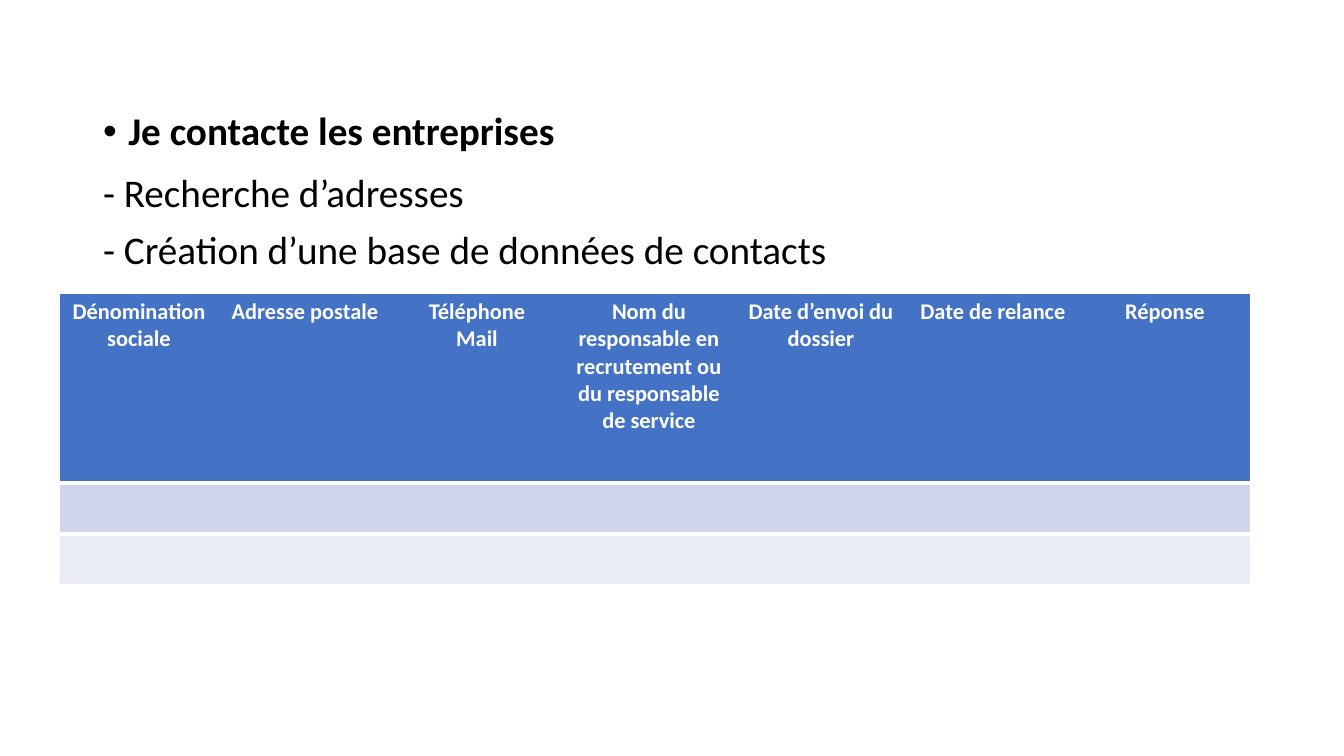
"""Build the slide on contacting companies, with its contact table."""
from dataclasses import dataclass

import lxml.etree
import pptx
import pptx.dml.color
import pptx.enum.text
import pptx.oxml.ns
import pptx.util

EMU_PER_PX = 12192000 / 1344
FONT = "Calibri"
BLACK = pptx.dml.color.RGBColor(0x00, 0x00, 0x00)
WHITE = pptx.dml.color.RGBColor(0xFF, 0xFF, 0xFF)
HEADER_BLUE = pptx.dml.color.RGBColor(0x44, 0x72, 0xC4)
BAND_DARK = pptx.dml.color.RGBColor(0xCF, 0xD5, 0xEA)
BAND_LIGHT = pptx.dml.color.RGBColor(0xE9, 0xEB, 0xF5)
PLAIN_TABLE_STYLE = "{2D5ABB26-0587-4C30-8999-92F81FD0307C}"


@dataclass(frozen=True)
class Box:
    left: int
    top: int
    width: int
    height: int


@dataclass(frozen=True)
class Column:
    heading: str
    width: int = 172


@dataclass(frozen=True)
class Row:
    height: int
    fill: pptx.dml.color.RGBColor
    top_border: int = 0
    bottom_border: int = 0


HEADING_BOX = Box(93, 107, 478, 53)
STEPS_BOX = Box(93, 169, 1159, 480)
TABLE_LEFT, TABLE_TOP = 59, 293
COLUMNS = [
    Column("Dénomination sociale", 160),
    Column("Adresse postale"),
    Column("Téléphone\nMail"),
    Column("Nom du responsable en recrutement ou du responsable de service"),
    Column("Date d’envoi du dossier"),
    Column("Date de relance"),
    Column("Réponse"),
]
ROWS = [
    Row(190, HEADER_BLUE, top_border=1, bottom_border=3),
    Row(51, BAND_DARK, top_border=3),
    Row(51, BAND_LIGHT, bottom_border=1),
]


def px(length: int) -> int:
    return round(length * EMU_PER_PX)


def add_element(parent, tag: str, **attributes: str):
    return lxml.etree.SubElement(parent, pptx.oxml.ns.qn(tag), attributes)


def format_runs(paragraph, size: int, color: pptx.dml.color.RGBColor, bold: bool) -> None:
    for run in paragraph.runs:
        run.font.name = FONT
        run.font.size = pptx.util.Pt(size)
        run.font.bold = bold
        run.font.color.rgb = color


def fill_placeholder(shape, box: Box, text: str, bold: bool, bullet: str = "") -> None:
    shape.left, shape.top = px(box.left), px(box.top)
    shape.width, shape.height = px(box.width), px(box.height)
    text_frame = shape.text_frame
    text_frame.text = text
    text_frame.vertical_anchor = pptx.enum.text.MSO_ANCHOR.TOP
    text_frame.auto_size = pptx.enum.text.MSO_AUTO_SIZE.NONE
    indent = pptx.util.Inches(0.25) if bullet else 0
    for paragraph in text_frame.paragraphs:
        paragraph.alignment = pptx.enum.text.PP_ALIGN.LEFT
        paragraph.line_spacing = 0.9
        paragraph.space_before = pptx.util.Pt(10)
        format_runs(paragraph, 28, BLACK, bold)
        properties = paragraph._p.get_or_add_pPr()
        properties.set("marL", str(indent))
        properties.set("indent", str(-indent))
        if bullet:
            add_element(properties, "a:buFont", typeface="Arial")
            add_element(properties, "a:buChar", char=bullet)
        else:
            add_element(properties, "a:buNone")


def add_border(cell, side: str, points: int) -> None:
    width = str(pptx.util.Pt(points))
    line = add_element(cell._tc.get_or_add_tcPr(), f"a:ln{side}", w=width)
    fill = add_element(line, "a:solidFill")
    add_element(fill, "a:srgbClr", val=str(WHITE))


def format_cell(cell, row: Row, is_first: bool, is_last: bool) -> None:
    borders = {"L": int(is_first), "R": int(is_last), "T": row.top_border, "B": row.bottom_border}
    for side, points in borders.items():
        if points:
            add_border(cell, side, points)
    cell.fill.solid()
    cell.fill.fore_color.rgb = row.fill


def add_contact_table(slide) -> None:
    width = sum(column.width for column in COLUMNS)
    height = sum(row.height for row in ROWS)
    table = slide.shapes.add_table(
        len(ROWS), len(COLUMNS), px(TABLE_LEFT), px(TABLE_TOP), px(width), px(height)
    ).table
    table._tbl.tblPr.find(pptx.oxml.ns.qn("a:tableStyleId")).text = PLAIN_TABLE_STYLE
    for row_index, row in enumerate(ROWS):
        table.rows[row_index].height = px(row.height)
        for column_index in range(len(COLUMNS)):
            cell = table.cell(row_index, column_index)
            format_cell(cell, row, column_index == 0, column_index == len(COLUMNS) - 1)
    for column_index, column in enumerate(COLUMNS):
        table.columns[column_index].width = px(column.width)
        text_frame = table.cell(0, column_index).text_frame
        text_frame.text = column.heading
        for paragraph in text_frame.paragraphs:
            paragraph.alignment = pptx.enum.text.PP_ALIGN.CENTER
            format_runs(paragraph, 16, WHITE, True)


def main() -> None:
    presentation = pptx.Presentation()
    presentation.slide_width, presentation.slide_height = px(1344), px(756)
    slide = presentation.slides.add_slide(presentation.slide_layouts[1])
    fill_placeholder(slide.shapes.title, HEADING_BOX, "Je contacte les entreprises", True, "•")
    steps = "- Recherche d’adresses\n- Création d’une base de données de contacts"
    fill_placeholder(slide.placeholders[1], STEPS_BOX, steps, False)
    add_contact_table(slide)
    presentation.save("out.pptx")


if __name__ == "__main__":
    main()
